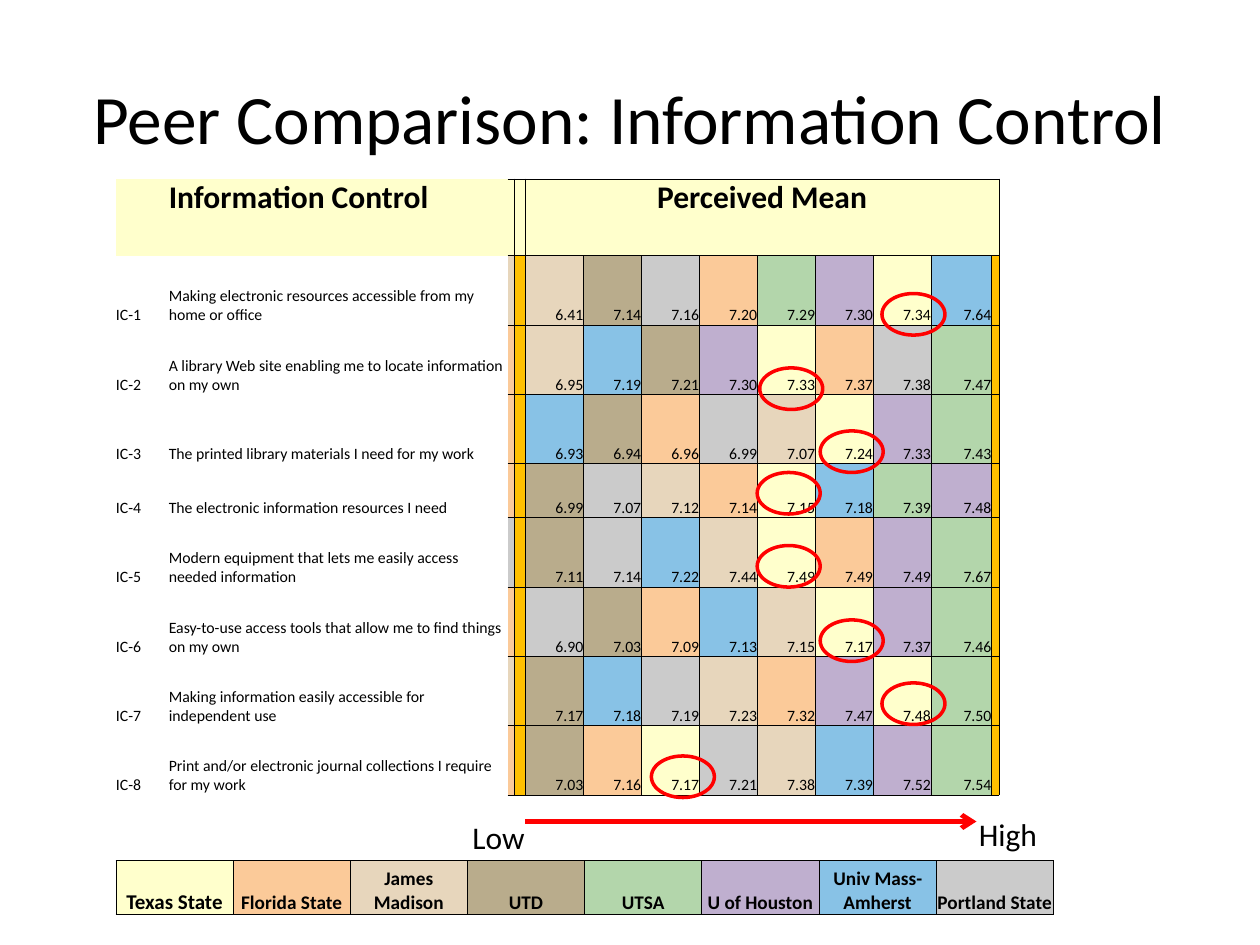
from dataclasses import dataclass

from lxml.etree import SubElement
from pptx import Presentation
from pptx.dml.color import RGBColor
from pptx.enum.shapes import MSO_CONNECTOR, MSO_SHAPE
from pptx.enum.text import MSO_ANCHOR, MSO_AUTO_SIZE, PP_ALIGN
from pptx.oxml import parse_xml
from pptx.oxml.ns import nsdecls, qn
from pptx.util import Emu, Inches, Pt

SLIDE_WIDTH, SLIDE_HEIGHT = Inches(10), Inches(7.5)
GRID_COLUMNS, GRID_ROWS = 10, 7.5
PLAIN_TABLE_STYLE = "{2D5ABB26-0587-4C30-8999-92F81FD0307C}"
CREAM, GOLD, RED, BLACK = "FFFFCC", "FFC000", "FF0000", "000000"
ALL_SIDES = "LRTB"


@dataclass(frozen=True)
class Peer:
    name: str
    fill: str
    size: float = 11


@dataclass(frozen=True)
class Question:
    wording: str
    gutter: str
    ranking: str
    means: str
    ring: tuple[float, float]


PEERS = {
    "T": Peer("Texas State", CREAM, 12),
    "F": Peer("Florida State", "FBCA99"),
    "J": Peer("James Madison", "E7D6BC"),
    "D": Peer("UTD", "B9AC8C"),
    "S": Peer("UTSA", "B3D6AB"),
    "H": Peer("U of Houston", "BFAFCF"),
    "A": Peer("Univ Mass-Amherst", "88C2E6"),
    "P": Peer("Portland State", "CBCBCB"),
}

QUESTIONS = [
    Question("Making electronic resources accessible from my home or office",
             "J", "JDPFSHTA", "6.41 7.14 7.16 7.20 7.29 7.30 7.34 7.64", (7, 2.33)),
    Question("A library Web site enabling me to locate information on my own",
             "F", "JADHTFPS", "6.95 7.19 7.21 7.30 7.33 7.37 7.38 7.47", (6.03, 2.92)),
    Question("The printed library materials I need for my work",
             "F", "ADFPJTHS", "6.93 6.94 6.96 6.99 7.07 7.24 7.33 7.43", (6.51, 3.42)),
    Question("The electronic information resources I need",
             "F", "DPJFTASH", "6.99 7.07 7.12 7.14 7.15 7.18 7.39 7.48", (6.01, 3.75)),
    Question("Modern equipment that lets me easily access needed information",
             "P", "DPAJTFHS", "7.11 7.14 7.22 7.44 7.49 7.49 7.49 7.67", (6.01, 4.33)),
    Question("Easy-to-use access tools that allow me to find things on my own",
             "F", "PDFAJTHS", "6.90 7.03 7.09 7.13 7.15 7.17 7.37 7.46", (6.51, 4.92)),
    Question("Making information easily accessible for independent use",
             "J", "DAPJFHTS", "7.17 7.18 7.19 7.23 7.32 7.47 7.48 7.50", (7, 5.42)),
    Question("Print and/or electronic journal collections I require for my work",
             "F", "DFTPJAHS", "7.03 7.16 7.17 7.21 7.38 7.39 7.52 7.54", (5.17, 6)),
]


def across(columns: float) -> Emu:
    return Emu(round(SLIDE_WIDTH * columns / GRID_COLUMNS))


def down(rows: float) -> Emu:
    return Emu(round(SLIDE_HEIGHT * rows / GRID_ROWS))


def area(left: float, top: float, width: float, height: float) -> tuple:
    return across(left), down(top), across(width), down(height)


def paint(target, colour: str) -> None:
    target.solid()
    target.fore_color.rgb = RGBColor.from_string(colour)


def write(frame, text: str, *, size: float, bold: bool = False,
          align=PP_ALIGN.LEFT, colour: str = BLACK) -> None:
    paragraph = frame.paragraphs[0]
    paragraph.alignment = align
    run = paragraph.add_run()
    run.text = text
    run.font.name, run.font.size, run.font.bold = "Calibri", Pt(size), bold
    run.font.color.rgb = RGBColor.from_string(colour)


def dress(cell, *, fill: str = "", sides: str = ALL_SIDES, margin: float = 0,
          anchor=MSO_ANCHOR.BOTTOM) -> None:
    cell.margin_left = cell.margin_right = cell.margin_top = Inches(margin)
    cell.margin_bottom = 0
    cell.vertical_anchor = anchor
    if fill:
        paint(cell.fill, fill)
    else:
        cell.fill.background()
    properties = cell._tc.get_or_add_tcPr()
    for position, side in enumerate(ALL_SIDES):
        stroke = (f'<a:solidFill><a:srgbClr val="{BLACK}"/></a:solidFill>'
                  if side in sides else "<a:noFill/>")
        properties.insert(position, parse_xml(
            f'<a:ln{side} {nsdecls("a")} w="{Pt(0.5)}">{stroke}</a:ln{side}>'))


def add_plain_table(slide, left: float, top: float,
                    widths: list[float], heights: list[float]):
    table = slide.shapes.add_table(
        len(heights), len(widths), *area(left, top, sum(widths), sum(heights))).table
    table.first_row = table.horz_banding = False
    table._tbl.tblPr.find(qn("a:tableStyleId")).text = PLAIN_TABLE_STYLE
    for column, width in zip(table.columns, widths):
        column.width = across(width)
    for row, height in zip(table.rows, heights):
        row.height = down(height)
    return table


def add_comparison(slide) -> None:
    heights = [0.61] + [0.55] * 3 + [0.43] + [0.55] * 4
    widths = [0.42, 2.69, 0.05, 0.09] + [0.46] * 7 + [0.48, 0.06]
    table = add_plain_table(slide, 0.92, 1.42, widths, heights)
    open_sides = ["", "", "RTB"] + [ALL_SIDES] * 10

    table.cell(0, 4).merge(table.cell(0, 12))
    for column in range(5):
        dress(table.cell(0, column), fill=CREAM, sides=open_sides[column],
              anchor=MSO_ANCHOR.TOP)
    write(table.cell(0, 1).text_frame, "Information Control", size=18, bold=True)
    write(table.cell(0, 4).text_frame, "Perceived Mean", size=18, bold=True,
          align=PP_ALIGN.CENTER)

    for number, question in enumerate(QUESTIONS, 1):
        ranked = [PEERS[code].fill for code in question.ranking]
        fills = ["", "", PEERS[question.gutter].fill, GOLD, *ranked, GOLD]
        texts = [f"IC-{number}", question.wording, "", "", *question.means.split(), ""]
        for column, (fill, text) in enumerate(zip(fills, texts)):
            cell = table.cell(number, column)
            dress(cell, fill=fill, sides=open_sides[column])
            if text:
                write(cell.text_frame, text, size=9,
                      align=PP_ALIGN.RIGHT if column > 3 else PP_ALIGN.LEFT)


def add_legend(slide) -> None:
    table = add_plain_table(slide, 0.92, 6.83, [0.93] * len(PEERS), [0.43])
    for column, peer in enumerate(PEERS.values()):
        cell = table.cell(0, column)
        dress(cell, fill=peer.fill, margin=0.01)
        write(cell.text_frame, peer.name, size=peer.size, bold=True,
              align=PP_ALIGN.CENTER)


def add_scale(slide) -> None:
    arrow = slide.shapes.add_connector(
        MSO_CONNECTOR.STRAIGHT, across(4.17), down(6.52), across(7.75), down(6.52))
    paint(arrow.line.fill, RED)
    arrow.line.width = Pt(2.75)
    SubElement(arrow.line._get_or_add_ln(), qn("a:tailEnd"), type="arrow")
    SubElement(arrow._element.spPr, qn("a:effectLst"))
    for text, left, top, width in (("Low", 3.65, 6.44, 0.62), ("High", 7.67, 6.42, 0.67)):
        frame = slide.shapes.add_textbox(*area(left, top, width, 0.4)).text_frame
        frame.word_wrap = False
        frame.auto_size = MSO_AUTO_SIZE.SHAPE_TO_FIT_TEXT
        write(frame, text, size=18)


def add_ring(slide, left: float, top: float) -> None:
    ring = slide.shapes.add_shape(MSO_SHAPE.OVAL, *area(left, top, 0.5, 0.33))
    ring.shadow.inherit = False
    ring.fill.background()
    paint(ring.line.fill, RED)
    ring.line.width = Pt(2)


def main() -> None:
    deck = Presentation()
    deck.slide_width, deck.slide_height = SLIDE_WIDTH, SLIDE_HEIGHT
    slide = deck.slides.add_slide(deck.slide_layouts[5])
    title = slide.shapes.title
    title.left, title.top, title.width, title.height = area(0.5, 0.3, 9, 1.25)
    title.text_frame.vertical_anchor = MSO_ANCHOR.MIDDLE
    write(title.text_frame, "Peer Comparison: Information Control", size=39.6,
          align=PP_ALIGN.CENTER)
    add_comparison(slide)
    add_legend(slide)
    add_scale(slide)
    for question in QUESTIONS:
        add_ring(slide, *question.ring)
    deck.save("out.pptx")


if __name__ == "__main__":
    main()
